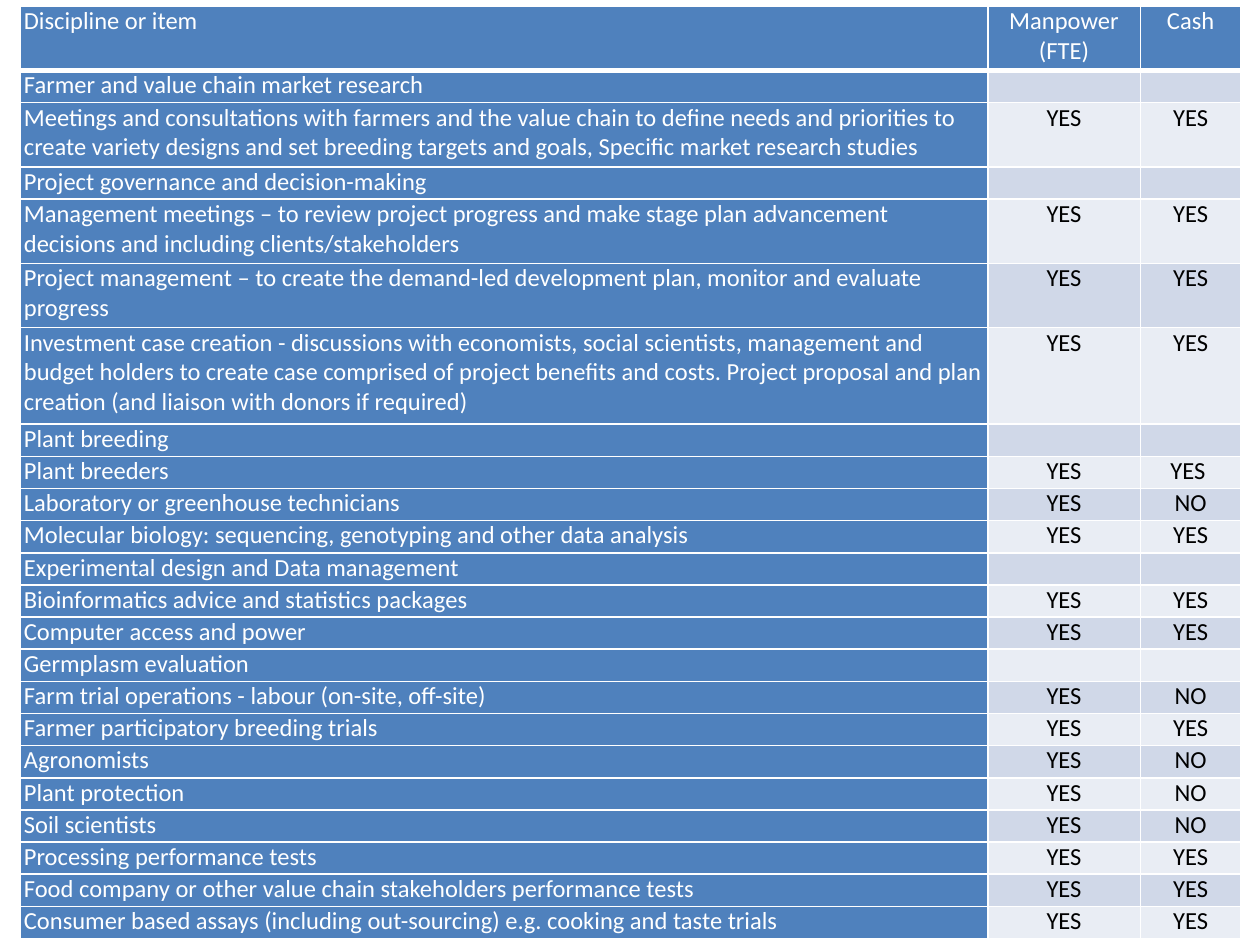
from lxml.etree import SubElement
from pptx import Presentation
from pptx.dml.color import RGBColor
from pptx.enum.text import PP_ALIGN
from pptx.oxml.ns import qn
from pptx.util import Inches, Pt

COLORS = {
    "blue": "4F81BD",
    "dark_band": "D0D8E8",
    "light_band": "E9EDF4",
    "white": "FFFFFF",
    "black": "000000",
}
FONT = "Calibri"
FONT_SIZE = 14
COLUMN_WIDTHS = [7.68, 1.21, 0.8]
LINE_HEIGHT = Inches(7.4) // 29  # the table holds 29 lines of text

# Discipline or item, manpower, cash, number of text lines
BUDGET_ROWS = [
    ("Discipline or item", "Manpower\v(FTE)", "Cash", 2),
    ("Farmer and value chain market research", "", "", 1),
    ("Meetings and consultations with farmers and the value chain to define "
     "needs and priorities to create variety designs and set breeding targets "
     "and goals, Specific market research studies", "YES", "YES", 2),
    ("Project governance and decision-making", "", "", 1),
    ("Management meetings – to review project progress and make stage plan "
     "advancement decisions and including clients/stakeholders", "YES", "YES", 2),
    ("Project management – to create the demand-led development plan, monitor "
     "and evaluate progress", "YES", "YES", 2),
    ("Investment case creation - discussions with economists, social scientists, "
     "management and budget holders to create case comprised of project benefits "
     "and costs. Project proposal and plan creation (and liaison with donors if "
     "required)", "YES", "YES", 3),
    ("Plant breeding", "", "", 1),
    ("Plant breeders", "YES", "YES ", 1),
    ("Laboratory or greenhouse technicians", "YES", "NO", 1),
    ("Molecular biology: sequencing, genotyping and other data analysis",
     "YES", "YES", 1),
    ("Experimental design and Data management", "", "", 1),
    ("Bioinformatics advice and statistics packages", "YES", "YES", 1),
    ("Computer access and power", "YES", "YES", 1),
    ("Germplasm evaluation", "", "", 1),
    ("Farm trial operations - labour (on-site, off-site)", "YES", "NO", 1),
    ("Farmer participatory breeding trials", "YES", "YES", 1),
    ("Agronomists", "YES", "NO", 1),
    ("Plant protection", "YES", "NO", 1),
    ("Soil scientists", "YES", "NO", 1),
    ("Processing performance tests", "YES", "YES", 1),
    ("Food company or other value chain stakeholders performance tests",
     "YES", "YES", 1),
    ("Consumer based assays (including out-sourcing) e.g. cooking and taste trials",
     "YES", "YES", 1),
]


def rgb(name):
    return RGBColor.from_string(COLORS[name])


def set_borders(cell, bottom_width):
    """Draw white borders; must run before the fill, which follows them in tcPr."""
    properties = cell._tc.get_or_add_tcPr()
    for side in "LRTB":
        width = Pt(bottom_width if side == "B" else 1)
        border = SubElement(properties, qn(f"a:ln{side}"), w=str(width))
        fill = SubElement(border, qn("a:solidFill"))
        SubElement(fill, qn("a:srgbClr"), val=COLORS["white"])


def write_cell(cell, text, fill, color, align):
    cell.margin_left = cell.margin_right = Inches(0.03)
    cell.margin_top = cell.margin_bottom = 0
    cell.fill.solid()
    cell.fill.fore_color.rgb = rgb(fill)
    paragraph = cell.text_frame.paragraphs[0]
    paragraph.text = text
    paragraph.alignment = align
    for run in paragraph.runs:
        run.font.name = FONT
        run.font.size = Pt(FONT_SIZE)
        run.font.color.rgb = rgb(color)
    # Keeps empty cells from growing to the default text size
    SubElement(paragraph._p, qn("a:endParaRPr"), sz=str(FONT_SIZE * 100))


def add_budget_table(slide):
    table = slide.shapes.add_table(
        len(BUDGET_ROWS), len(COLUMN_WIDTHS),
        Inches(0.16), Inches(0.05), Inches(sum(COLUMN_WIDTHS)), Inches(7.4),
    ).table
    for column, width in zip(table.columns, COLUMN_WIDTHS):
        column.width = Inches(width)
    for row_index, (*texts, line_count) in enumerate(BUDGET_ROWS):
        table.rows[row_index].height = LINE_HEIGHT * line_count
        is_header = row_index == 0
        band = "dark_band" if row_index % 2 else "light_band"
        for column_index, text in enumerate(texts):
            cell = table.cell(row_index, column_index)
            is_item = column_index == 0
            on_blue = is_header or is_item
            set_borders(cell, 3 if is_header else 1)
            write_cell(
                cell, text,
                fill="blue" if on_blue else band,
                color="white" if on_blue else "black",
                align=PP_ALIGN.LEFT if is_item else PP_ALIGN.CENTER,
            )


def main():
    deck = Presentation()
    deck.slide_width, deck.slide_height = Inches(10), Inches(7.5)
    slide = deck.slides.add_slide(deck.slide_layouts[6])
    add_budget_table(slide)
    deck.save("out.pptx")


if __name__ == "__main__":
    main()
